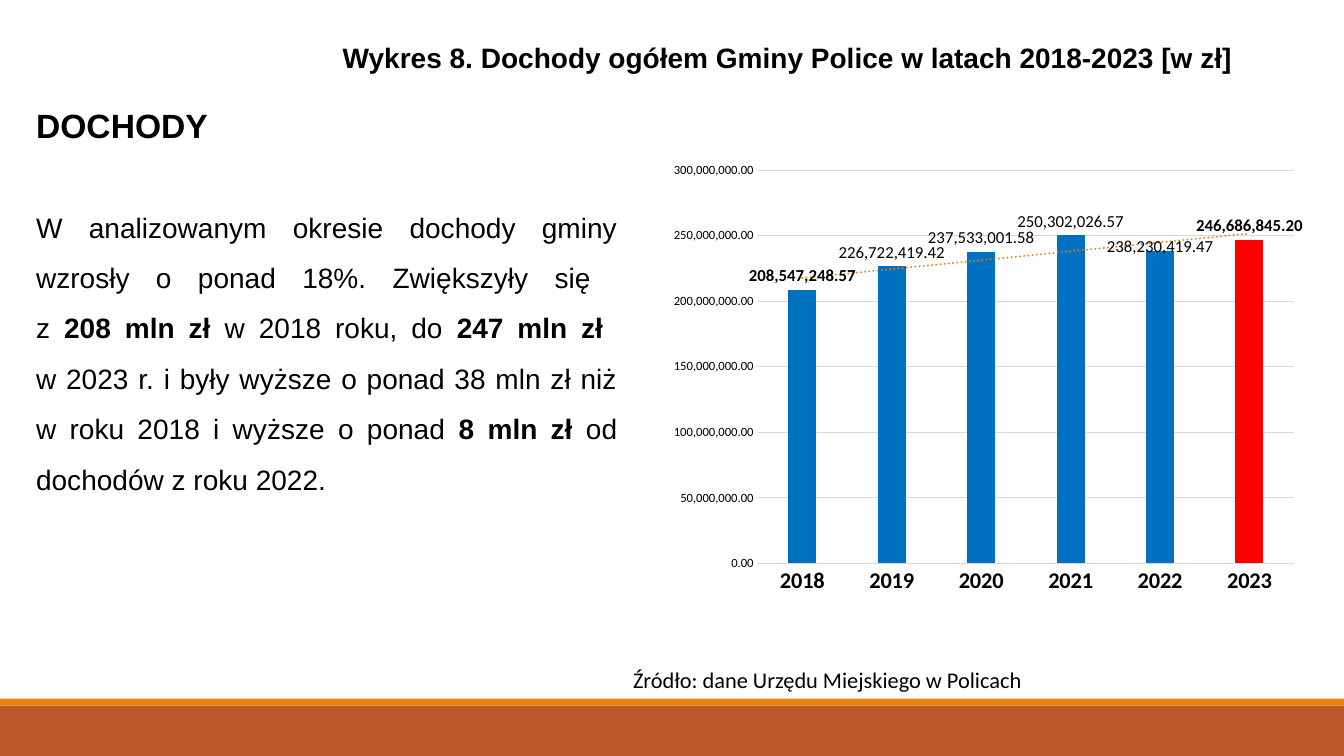
from dataclasses import dataclass

from lxml import etree
from pptx import Presentation
from pptx.chart.data import CategoryChartData
from pptx.dml.color import RGBColor
from pptx.enum.chart import XL_CHART_TYPE, XL_LABEL_POSITION, XL_TICK_MARK
from pptx.enum.shapes import MSO_SHAPE
from pptx.enum.text import MSO_AUTO_SIZE, PP_ALIGN
from pptx.oxml import parse_xml
from pptx.util import Inches, Pt

COLUMN_CLUSTERED = XL_CHART_TYPE.COLUMN_CLUSTERED
OUTSIDE_END = XL_LABEL_POSITION.OUTSIDE_END
NO_TICK = XL_TICK_MARK.NONE
RECTANGLE = MSO_SHAPE.RECTANGLE
GROW = MSO_AUTO_SIZE.SHAPE_TO_FIT_TEXT
LEFT, JUSTIFY = PP_ALIGN.LEFT, PP_ALIGN.JUSTIFY

SLIDE_WIDTH, SLIDE_HEIGHT = Inches(13.33), Inches(7.5)
COLORS = {
    "text": "000000",
    "band": "BD582C",
    "accent": "E48312",
    "bar": "0070C0",
    "latest": "FF0000",
    "grid": "D9D9D9",
    "background": "FFFFFF",
}
NUMBER_FORMAT = "#,##0.00"
CHART_NAMESPACE = "http://schemas.openxmlformats.org/drawingml/2006/chart"
DRAWING_NAMESPACE = "http://schemas.openxmlformats.org/drawingml/2006/main"
NAMESPACES = f'xmlns:c="{CHART_NAMESPACE}" xmlns:a="{DRAWING_NAMESPACE}"'

INCOME = {
    "2018": 208547248.57,
    "2019": 226722419.42,
    "2020": 237533001.58,
    "2021": 250302026.57,
    "2022": 238230419.47,
    "2023": 246686845.20,
}
BOLD_LABELS = (0, 5)
LOWERED_LABEL = 4
LATEST_YEAR = 5


@dataclass(frozen=True)
class Area:
    left: float
    top: float
    width: float
    height: float

    def lengths(self) -> tuple[int, int, int, int]:
        return (
            int(SLIDE_WIDTH * self.left / 100),
            int(SLIDE_HEIGHT * self.top / 100),
            int(SLIDE_WIDTH * self.width / 100),
            int(SLIDE_HEIGHT * self.height / 100),
        )


@dataclass(frozen=True)
class Band:
    area: Area
    color: str


@dataclass(frozen=True)
class Span:
    text: str
    bold: bool = False


@dataclass(frozen=True)
class Block:
    spans: tuple[Span, ...]
    size: float
    space_after: float = 0


BANDS = (
    Band(Area(0, 93.33, 100, 6.67), "band"),
    Band(Area(0, 92.4, 100, 0.93), "accent"),
)
TITLE_AREA = Area(24.76, 4.67, 72.39, 5.87)
BODY_AREA = Area(1.95, 10.53, 44.71, 62.4)
SOURCE_AREA = Area(46.36, 87.47, 50.04, 4.93)
CHART_AREA = Area(46.59, 17.07, 51.46, 65.47)

TITLE = Block((Span("Wykres 8. Dochody ogółem Gminy Police w latach 2018-2023 [w zł]", True),), 20)
SOURCE = Block((Span("Źródło: dane Urzędu Miejskiego w Policach"),), 16)
BODY = (
    Block((Span("DOCHODY", True),), 24, space_after=34.5),
    Block(
        (
            Span("W analizowanym okresie dochody gminy wzrosły o ponad 18%. Zwiększyły się \nz "),
            Span("208 mln zł ", True),
            Span("w 2018 roku, do "),
            Span("247 mln zł \n", True),
            Span("w 2023 r. i były wyższe o ponad 38 mln zł niż w roku 2018 i wyższe o ponad "),
            Span("8 mln zł ", True),
            Span("od dochodów z roku 2022."),
        ),
        20,
    ),
)


def color(name: str) -> RGBColor:
    return RGBColor.from_string(COLORS[name])


def style_font(font, size: float, bold: bool = False, name: str = "Calibri") -> None:
    font.name, font.size, font.bold = name, Pt(size), bold
    font.color.rgb = color("text")


def add_text(slide, area: Area, *blocks: Block, font: str = "Arial",
             align=LEFT, line_spacing: float = 1.0) -> None:
    frame = slide.shapes.add_textbox(*area.lengths()).text_frame
    frame.word_wrap = True
    frame.auto_size = GROW
    for index, block in enumerate(blocks):
        paragraph = frame.add_paragraph() if index else frame.paragraphs[0]
        paragraph.alignment = align
        paragraph.line_spacing = line_spacing
        paragraph.space_after = Pt(block.space_after)
        for span in block.spans:
            for part_index, part in enumerate(span.text.split("\n")):
                if part_index:
                    paragraph.add_line_break()
                if part:
                    run = paragraph.add_run()
                    run.text = part
                    style_font(run.font, block.size, span.bold, font)


def add_band(slide, band: Band) -> None:
    shape = slide.shapes.add_shape(RECTANGLE, *band.area.lengths())
    shape.shadow.inherit = False
    shape.fill.solid()
    shape.fill.fore_color.rgb = color(band.color)
    shape.line.fill.background()


def layout_xml(**values: object) -> etree.ElementBase:
    items = "".join(f'<c:{tag} val="{value}"/>' for tag, value in values.items())
    return parse_xml(f"<c:layout {NAMESPACES}><c:manualLayout>{items}</c:manualLayout></c:layout>")


def style_axes(chart) -> None:
    years, amounts = chart.category_axis, chart.value_axis
    for axis, size, bold in ((years, 16, True), (amounts, 9, False)):
        axis.major_tick_mark = axis.minor_tick_mark = NO_TICK
        style_font(axis.tick_labels.font, size, bold)
    amounts.minimum_scale, amounts.maximum_scale, amounts.major_unit = 0, 300_000_000, 50_000_000
    amounts.tick_labels.number_format = NUMBER_FORMAT
    amounts.tick_labels.number_format_is_linked = False
    amounts.format.line.fill.background()
    for line in (years.format.line, amounts.major_gridlines.format.line):
        line.color.rgb = color("grid")
        line.width = Pt(0.75)


def style_labels(series) -> None:
    labels = series.data_labels
    labels.show_value = True
    labels.position = OUTSIDE_END
    labels.number_format = NUMBER_FORMAT
    labels.number_format_is_linked = False
    style_font(labels.font, 12)
    for index in (*BOLD_LABELS, LOWERED_LABEL):
        label = series.points[index].data_label
        style_font(label.font, 12, index in BOLD_LABELS)
        label.position = OUTSIDE_END
    lowered = series._element.find(f".//{{*}}dLbl/{{*}}idx[@val='{LOWERED_LABEL}']")
    lowered.addnext(layout_xml(x=0, y=0.02))


def add_trend_line(series) -> None:
    trend = parse_xml(
        f'<c:trendline {NAMESPACES}><c:spPr><a:ln w="{Pt(1.5)}" cap="rnd"><a:solidFill>'
        f'<a:srgbClr val="{COLORS["accent"]}"/></a:solidFill><a:prstDash val="sysDot"/></a:ln></c:spPr>'
        '<c:trendlineType val="linear"/><c:dispRSqr val="0"/><c:dispEq val="0"/></c:trendline>'
    )
    series._element.find("{*}cat").addprevious(trend)


def add_income_chart(slide) -> None:
    data = CategoryChartData(number_format=NUMBER_FORMAT)
    data.categories = list(INCOME)
    data.add_series("Dochody", list(INCOME.values()))
    chart = slide.shapes.add_chart(COLUMN_CLUSTERED, *CHART_AREA.lengths(), data).chart
    chart.has_legend = chart.has_title = False
    style_font(chart.font, 10)
    style_axes(chart)
    plot = chart.plots[0]
    plot.vary_by_categories = False
    plot.gap_width, plot.overlap = 219, -27
    series = plot.series[0]
    series.format.fill.solid()
    series.format.fill.fore_color.rgb = color("bar")
    latest = series.points[LATEST_YEAR].format.fill
    latest.solid()
    latest.fore_color.rgb = color("latest")
    style_labels(series)
    add_trend_line(series)
    plot_area = chart._chartSpace.find(".//{*}plotArea")
    for layout in plot_area.findall("{*}layout"):
        plot_area.remove(layout)
    plot_area.insert(0, layout_xml(layoutTarget="inner", xMode="edge", yMode="edge",
                                   x=0.19, y=0.083, w=0.776, h=0.795))


def main() -> None:
    presentation = Presentation()
    presentation.slide_width, presentation.slide_height = SLIDE_WIDTH, SLIDE_HEIGHT
    slide = presentation.slides.add_slide(presentation.slide_layouts[6])
    slide.background.fill.solid()
    slide.background.fill.fore_color.rgb = color("background")
    for band in BANDS:
        add_band(slide, band)
    add_text(slide, BODY_AREA, *BODY, align=JUSTIFY, line_spacing=1.5)
    add_text(slide, TITLE_AREA, TITLE)
    add_text(slide, SOURCE_AREA, SOURCE, font="Calibri")
    add_income_chart(slide)
    presentation.save("out.pptx")


if __name__ == "__main__":
    main()
